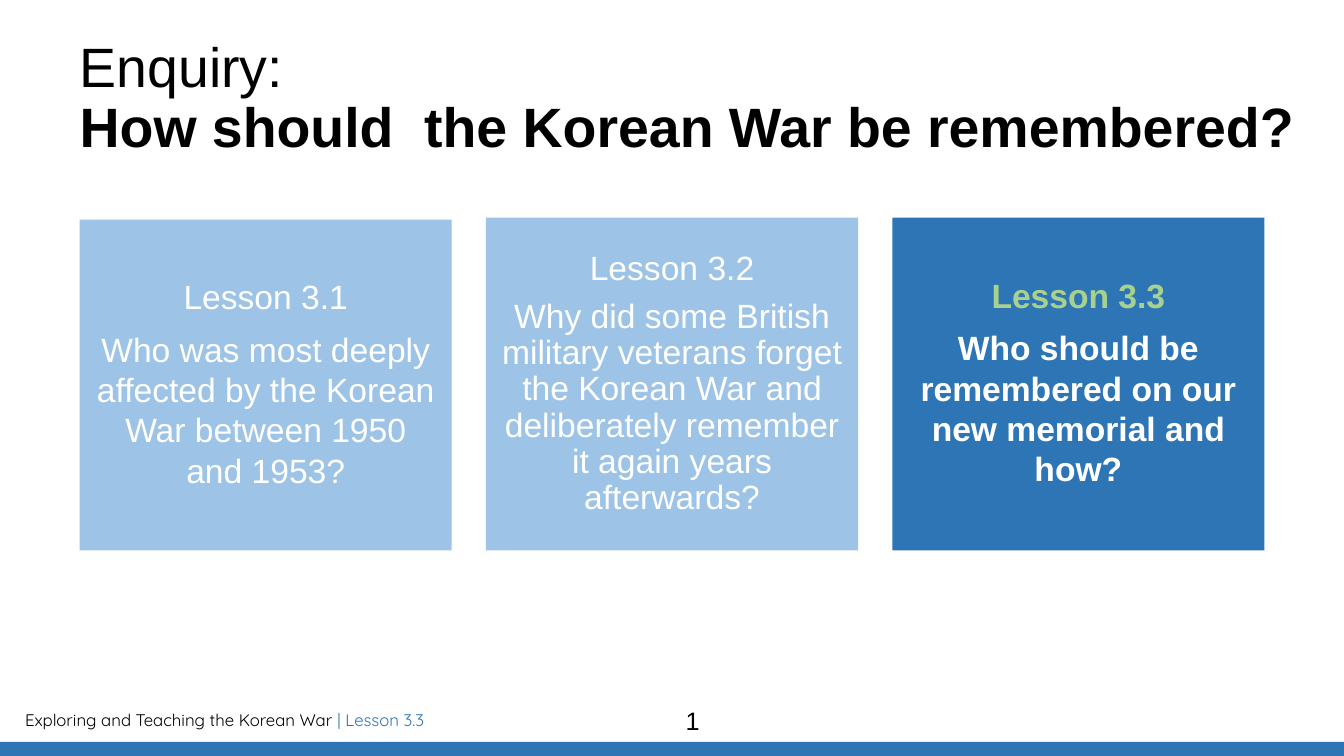
from dataclasses import dataclass

from pptx import Presentation
from pptx.dml.color import RGBColor
from pptx.enum.shapes import MSO_SHAPE
from pptx.enum.text import MSO_ANCHOR, MSO_AUTO_SIZE, PP_ALIGN
from pptx.util import Inches, Pt

RECTANGLE = MSO_SHAPE.RECTANGLE
TOP, MIDDLE = MSO_ANCHOR.TOP, MSO_ANCHOR.MIDDLE
LEFT, CENTER = PP_ALIGN.LEFT, PP_ALIGN.CENTER
NO_AUTOFIT = MSO_AUTO_SIZE.NONE
TITLE_ONLY = 5


@dataclass(frozen=True)
class Theme:
    font: str = "Arial"
    footer_font: str = "Quicksand"
    black: str = "000000"
    white: str = "FFFFFF"
    blue: str = "2E75B6"
    pale_blue: str = "9DC3E6"
    green: str = "A9D18E"
    title_size: float = 39.6
    lesson_size: float = 24
    number_size: float = 18
    footer_size: float = 12
    tight: float = 0.9
    lesson_gap: float = 8.4


class SlideBuilder:
    def __init__(self, slide, theme):
        self.slide = slide
        self.theme = theme

    def run(self, paragraph, words, size, color, bold=False, font=None):
        run = paragraph.add_run()
        run.text = words
        run.font.name = font or self.theme.font
        run.font.size = Pt(size)
        run.font.bold = bold
        run.font.color.rgb = RGBColor.from_string(color)

    def frame(self, shape, margin=None, anchor=TOP):
        frame = shape.text_frame
        frame.word_wrap = True
        frame.auto_size = NO_AUTOFIT
        frame.vertical_anchor = anchor
        if margin is not None:
            frame.margin_left = frame.margin_right = Inches(margin)
            frame.margin_top = frame.margin_bottom = Inches(margin)
        return frame

    def title(self, box, lead, question):
        theme = self.theme
        title = self.slide.shapes.title
        title.left, title.top, title.width, title.height = map(Inches, box)
        paragraph = self.frame(title, margin=0).paragraphs[0]
        paragraph.alignment = LEFT
        paragraph.line_spacing = theme.tight
        self.run(paragraph, lead, theme.title_size, theme.black)
        paragraph.add_line_break()
        self.run(paragraph, question, theme.title_size, theme.black, bold=True)

    def text(self, box, runs, size, font=None, align=LEFT):
        caption = self.slide.shapes.add_textbox(*map(Inches, box))
        paragraph = self.frame(caption).paragraphs[0]
        paragraph.alignment = align
        for words, color in runs:
            self.run(paragraph, words, size, color, font=font)

    def block(self, box, fill):
        block = self.slide.shapes.add_shape(RECTANGLE, *map(Inches, box))
        block.shadow.inherit = False
        block.fill.solid()
        block.fill.fore_color.rgb = RGBColor.from_string(fill)
        block.line.fill.background()
        return block

    def lesson(self, box, heading, question, current=False, tight=False):
        theme = self.theme
        card = self.block(box, theme.blue if current else theme.pale_blue)
        frame = self.frame(card, margin=0.14, anchor=MIDDLE)
        heading_line, question_line = frame.paragraphs[0], frame.add_paragraph()
        for paragraph in (heading_line, question_line):
            paragraph.alignment = CENTER
        for paragraph in (heading_line, question_line) if tight else (heading_line,):
            paragraph.line_spacing = theme.tight
            paragraph.space_after = Pt(theme.lesson_gap)
        heading_color = theme.green if current else theme.white
        self.run(heading_line, heading, theme.lesson_size, heading_color, current)
        self.run(question_line, question, theme.lesson_size, theme.white, current)


def main():
    theme = Theme()
    deck = Presentation()
    deck.slide_width, deck.slide_height = Inches(13.33), Inches(7.5)
    builder = SlideBuilder(deck.slides.add_slide(deck.slide_layouts[TITLE_ONLY]), theme)

    builder.text(
        (0.15, 6.99, 7.82, 0.3),
        [("Exploring and Teaching the Korean War ", theme.black),
         ("| Lesson 3.3", theme.blue)],
        theme.footer_size, font=theme.footer_font)
    builder.block((0, 7.36, 13.33, 0.15), theme.blue)
    builder.title((0.79, 0.39, 12.37, 1.45),
                  "Enquiry:", "How should  the Korean War be remembered?")

    lessons = [
        ("Lesson 3.1", "Who was most deeply affected by the Korean War between "
                       "1950 and 1953?", 2.18, {}),
        ("Lesson 3.2", "Why did some British military veterans forget the Korean War "
                       "and deliberately remember it again years afterwards?",
         2.16, {"tight": True}),
        ("Lesson 3.3", "Who should be remembered on our new memorial and how?",
         2.16, {"current": True}),
    ]
    first_left, pitch, card_width, bottom = 0.79, 4.03, 3.69, 5.46
    for index, (heading, question, top, style) in enumerate(lessons):
        box = (first_left + index * pitch, top, card_width, bottom - top)
        builder.lesson(box, heading, question, **style)

    builder.text((4.33, 6.95, 5.08, 0.4), [("1", theme.black)],
                 theme.number_size, align=CENTER)
    deck.save("out.pptx")


if __name__ == "__main__":
    main()
